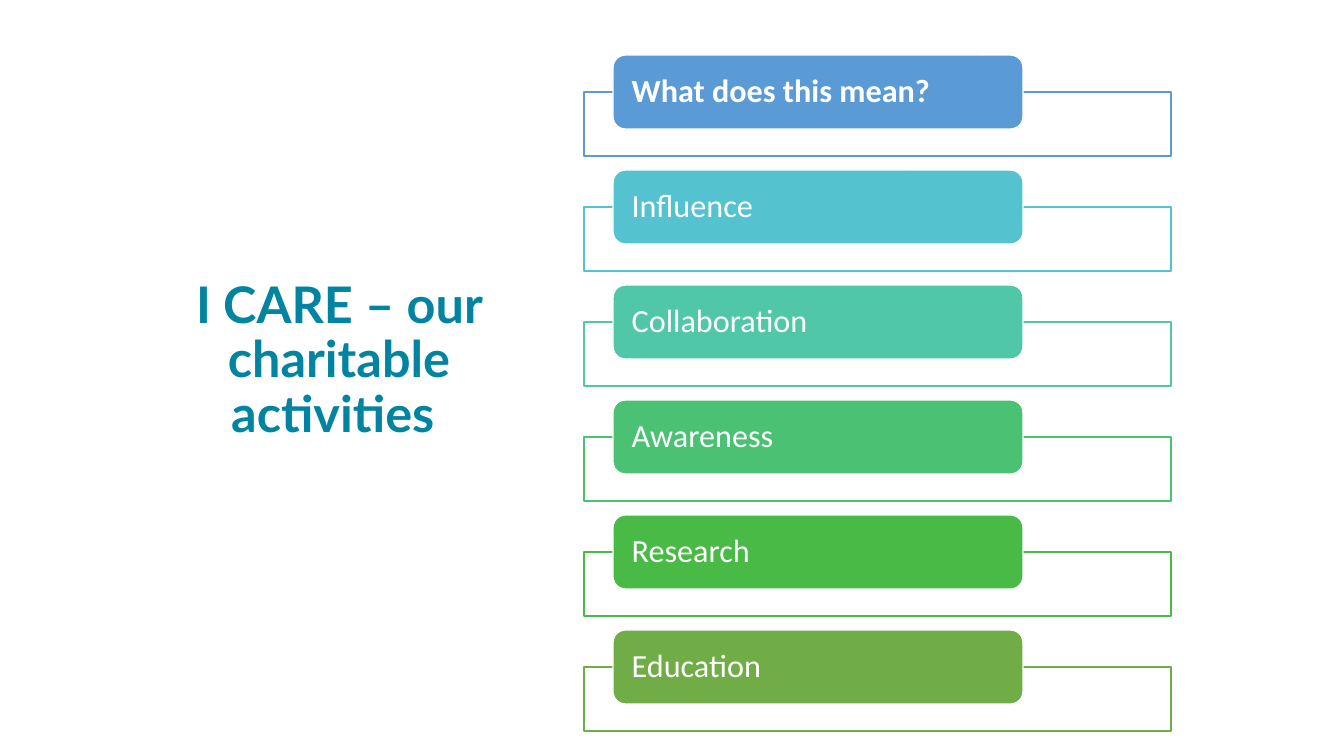
"""Build the I CARE slide: a title beside six labelled value boxes."""
import pptx
import pptx.util
import pptx.dml.color
import pptx.enum.shapes
import pptx.enum.text

PX = 914400 / 100.8
COLORS = {
    "title": "0084A1",
    "white": "FFFFFF",
    "What does this mean?": "5B9BD5",
    "Influence": "55C3CF",
    "Collaboration": "50C8A7",
    "Awareness": "4BC174",
    "Research": "4ABA46",
    "Education": "70AD47",
}
LABELS = list(COLORS)[2:]
SHAPES = pptx.enum.shapes.MSO_SHAPE
ALIGN = pptx.enum.text.PP_ALIGN


def box(kind, place, fill, line):
    shape = slide.shapes.add_shape(kind, *[round(n * PX) for n in place])
    shape.shadow.inherit = False
    shape.fill.solid()
    shape.fill.fore_color.rgb = pptx.dml.color.RGBColor.from_string(COLORS[fill])
    shape.line.color.rgb = pptx.dml.color.RGBColor.from_string(COLORS[line])
    shape.line.width = pptx.util.Pt(1)
    return shape


def write(shape, text, size, face, color, bold=False, align=ALIGN.LEFT, side=10, edge=5):
    frame = shape.text_frame
    frame.word_wrap = True
    frame.vertical_anchor = pptx.enum.text.MSO_ANCHOR.MIDDLE
    frame.margin_left = frame.margin_right = round(side * PX)
    frame.margin_top = frame.margin_bottom = round(edge * PX)
    para = frame.paragraphs[0]
    para.alignment = align
    para.line_spacing = 0.9
    run = para.add_run()
    run.text = text
    run.font.size = pptx.util.Pt(size)
    run.font.name = face
    run.font.bold = bold
    run.font.color.rgb = pptx.dml.color.RGBColor.from_string(COLORS[color])


deck = pptx.Presentation()
deck.slide_width = round(1344 * PX)
deck.slide_height = round(756 * PX)
slide = deck.slides.add_slide(deck.slide_layouts[6])

title = slide.shapes.add_textbox(*[round(n * PX) for n in (143, 237, 392, 249)])
write(title, "I CARE – our charitable activities ", size=36, face="Lato",
      color="title", bold=True, align=ALIGN.CENTER)

for row, label in enumerate(LABELS):
    top = 55 + 115 * row
    box(SHAPES.RECTANGLE, (584, top + 37, 587, 64), fill="white", line=label)
    pill = box(SHAPES.ROUNDED_RECTANGLE, (613, top, 410, 74), fill=label, line="white")
    write(pill, label, size=23, face="Calibri", color="white", bold=row == 0, side=15, edge=0)

deck.save("out.pptx")
